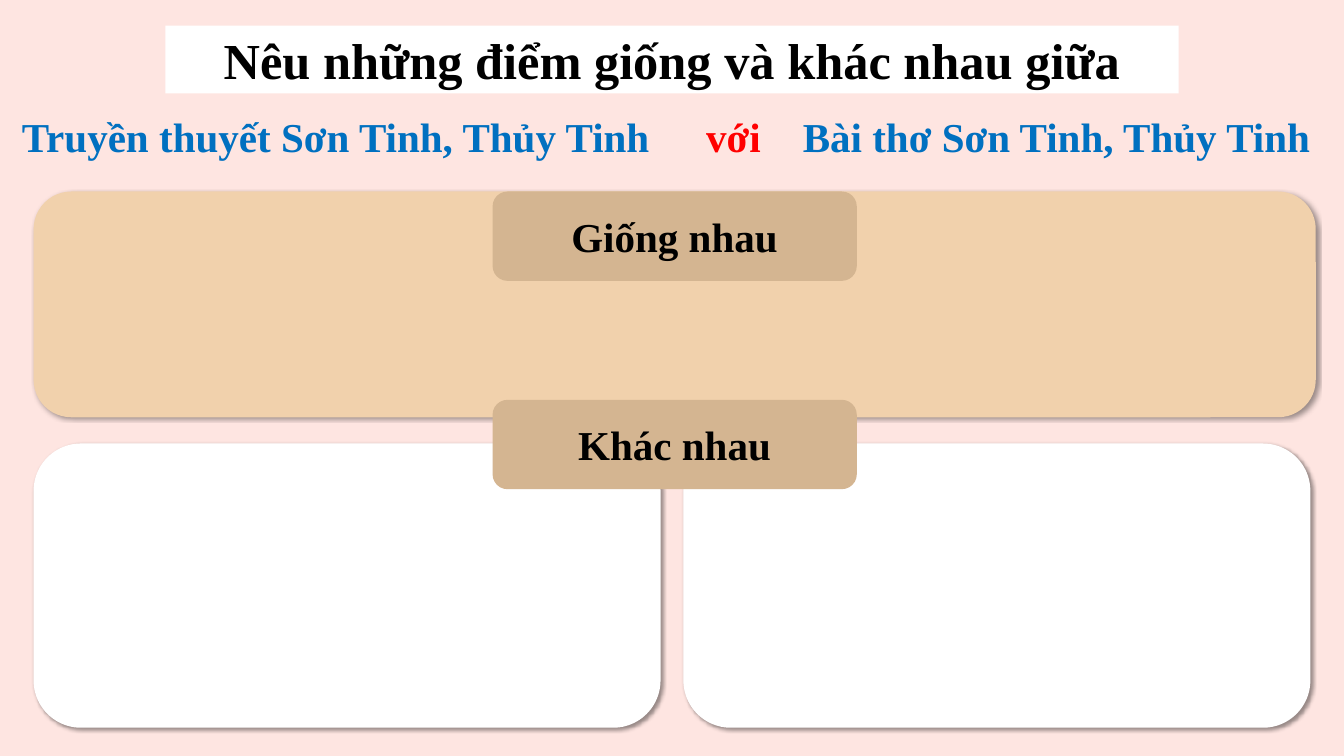
from lxml import etree
from pptx import Presentation
from pptx import util as u
from pptx.dml.color import RGBColor
from pptx.enum import shapes, text
from pptx.oxml import ns

COLOURS = {
    "background": "FEE5E1",
    "white": "FFFFFF",
    "sand": "F1D1AC",
    "tan": "D4B591",
    "black": "000000",
    "blue": "0070C0",
    "red": "FF0000",
}


class ComparisonSlide:
    """Holds the style and the current slide, and draws each kind of element."""

    font = "Times New Roman"
    size = 44

    def __init__(self, deck):
        self.slide = deck.slides.add_slide(deck.slide_layouts[6])
        backdrop = self.slide.background.fill
        backdrop.solid()
        backdrop.fore_color.rgb = self.colour("background")

    def colour(self, name):
        return RGBColor.from_string(COLOURS[name])

    def add_words(self, shape, words, colour, size, anchor):
        frame = shape.text_frame
        frame.word_wrap = True
        frame.vertical_anchor = anchor
        line = frame.paragraphs[0]
        line.alignment = text.PP_ALIGN.CENTER
        run = line.add_run()
        run.text = words
        run.font.name = self.font
        run.font.size = u.Pt(size)
        run.font.bold = True
        run.font.color.rgb = self.colour(colour)

    def block(self, kind, box, fill):
        shape = self.slide.shapes.add_shape(kind, *map(u.Inches, box))
        shape.shadow.inherit = False
        shape.fill.solid()
        shape.fill.fore_color.rgb = self.colour(fill)
        shape.line.fill.background()
        return shape

    def title(self, words, box):
        banner = self.block(shapes.MSO_SHAPE.RECTANGLE, box, "white")
        self.add_words(banner, words, "black", 54, text.MSO_ANCHOR.TOP)

    def panel(self, box, fill):
        panel = self.block(shapes.MSO_SHAPE.ROUNDED_RECTANGLE, box, fill)
        effects = panel._element.spPr.find(ns.qn("a:effectLst"))
        shadow = etree.SubElement(
            effects, ns.qn("a:outerShdw"), blurRad=str(u.Pt(4)), dist=str(u.Pt(3)),
            dir=str(45 * 60000), algn="tl", rotWithShape="0")
        tint = etree.SubElement(shadow, ns.qn("a:srgbClr"), val=COLOURS["black"])
        etree.SubElement(tint, ns.qn("a:alpha"), val="40000")
        return panel

    def tab(self, words, top):
        tab = self.block(shapes.MSO_SHAPE.ROUNDED_RECTANGLE, (7.33, top, 5.42, 1.33), "tan")
        self.add_words(tab, words, "black", self.size, text.MSO_ANCHOR.MIDDLE)
        return tab

    def label(self, words, left, width, colour):
        label = self.slide.shapes.add_textbox(*map(u.Inches, (left, 1.61, width, 0.84)))
        self.add_words(label, words, colour, self.size, text.MSO_ANCHOR.TOP)

    def group(self, *members):
        self.slide.shapes.add_group_shape(members)


def main():
    deck = Presentation()
    deck.slide_width, deck.slide_height = u.Inches(20), u.Inches(11.25)
    page = ComparisonSlide(deck)

    page.title("Nêu những điểm giống và khác nhau giữa", (2.46, 0.38, 15.08, 1.01))

    page.group(page.panel((0.5, 2.85, 19.08, 3.36), "sand"), page.tab("Giống nhau", 2.85))

    differences = [page.panel((left, 6.6, 9.33, 4.23), "white") for left in (10.17, 0.5)]
    page.group(*differences, page.tab("Khác nhau", 5.95))

    page.label("Truyền thuyết Sơn Tinh, Thủy Tinh", 0, 10, "blue")
    page.label("Bài thơ Sơn Tinh, Thủy Tinh", 11.42, 8.61, "blue")
    page.label("với", 10.33, 1.17, "red")

    deck.save("out.pptx")


if __name__ == "__main__":
    main()
